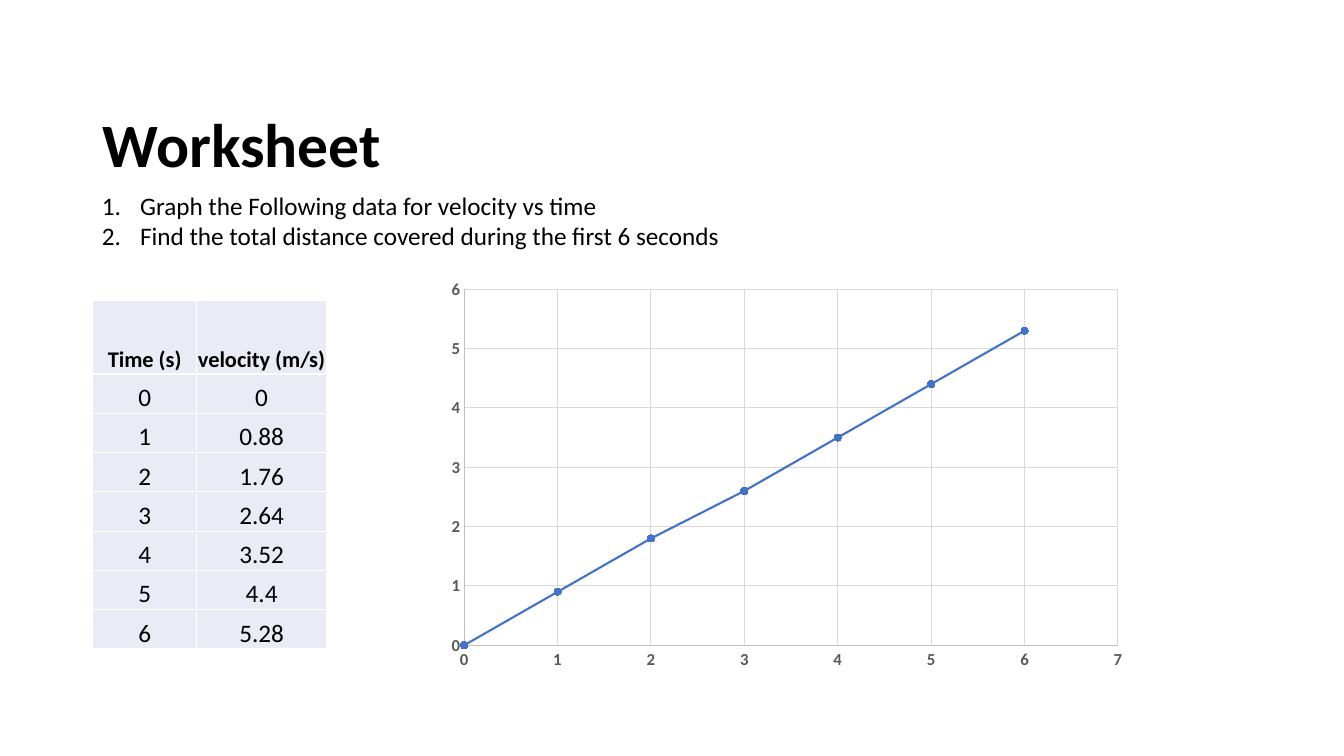
from lxml.etree import SubElement
from pptx import Presentation
from pptx.chart.data import XyChartData
from pptx.dml.color import RGBColor
from pptx.enum.chart import XL_CHART_TYPE, XL_MARKER_STYLE, XL_TICK_MARK
from pptx.enum.text import MSO_ANCHOR, MSO_AUTO_SIZE, PP_ALIGN
from pptx.oxml.ns import qn
from pptx.util import Inches, Pt

FONT = "Calibri"
COLORS = {
    "text": "000000",
    "cell": "E9EBF5",
    "border": "FFFFFF",
    "series": "4472C4",
    "label": "595959",
    "axis": "BFBFBF",
    "grid": "D9D9D9",
}
TASKS = [
    "Graph the Following data for velocity vs time",
    "Find the total distance covered during the first 6 seconds",
]
HEADINGS = ["Time (s)", "velocity (m/s)"]
READINGS = [(0, 0), (1, 0.88), (2, 1.76), (3, 2.64), (4, 3.52), (5, 4.4), (6, 5.28)]


def color(name):
    return RGBColor.from_string(COLORS[name])


def style_font(font, size, name="text", bold=False):
    font.name = FONT
    font.size = Pt(size)
    font.bold = bold
    font.color.rgb = color(name)


def style_line(line, name, width):
    line.color.rgb = color(name)
    line.width = Pt(width)


def place(shape, box):
    shape.left, shape.top, shape.width, shape.height = (Inches(v) for v in box)


def add_title(page, box):
    title = page.shapes.title
    place(title, box)
    frame = title.text_frame
    frame.text = "Worksheet"
    frame.auto_size = MSO_AUTO_SIZE.NONE
    frame.vertical_anchor = MSO_ANCHOR.BOTTOM
    para = frame.paragraphs[0]
    para.alignment = PP_ALIGN.LEFT
    para.line_spacing = 0.9
    style_font(para.font, 44, bold=True)


def add_tasks(page, box):
    body = page.placeholders[1]
    place(body, box)
    frame = body.text_frame
    frame.text = "\n".join(TASKS)
    frame.auto_size = MSO_AUTO_SIZE.SHAPE_TO_FIT_TEXT
    frame.vertical_anchor = MSO_ANCHOR.TOP
    for para in frame.paragraphs:
        properties = para._p.get_or_add_pPr()
        properties.set("marL", str(Inches(0.38)))
        properties.set("indent", str(-Inches(0.38)))
        SubElement(properties, qn("a:buFont"), typeface="+mj-lt")
        SubElement(properties, qn("a:buAutoNum"), type="arabicPeriod")
        para.space_before = Pt(0)
        style_font(para.font, 18)


def add_borders(cell):
    properties = cell._tc.get_or_add_tcPr()
    for position, side in enumerate(("lnL", "lnR", "lnT", "lnB")):
        line = properties.makeelement(qn(f"a:{side}"), {"w": str(Pt(1))})
        fill = SubElement(line, qn("a:solidFill"))
        SubElement(fill, qn("a:srgbClr"), val=COLORS["border"])
        properties.insert(position, line)


def fill_cell(cell, text, size, bold):
    cell.fill.solid()
    cell.fill.fore_color.rgb = color("cell")
    cell.margin_left = cell.margin_right = cell.margin_top = Inches(0.01)
    cell.margin_bottom = 0
    cell.vertical_anchor = MSO_ANCHOR.BOTTOM
    cell.text = text
    para = cell.text_frame.paragraphs[0]
    para.alignment = PP_ALIGN.CENTER
    style_font(para.font, size, bold=bold)
    add_borders(cell)


def add_readings_table(page, box):
    rows = [HEADINGS, *READINGS]
    table = page.shapes.add_table(len(rows), 2, *(Inches(v) for v in box)).table
    for column, width in zip(table.columns, (1.03, 1.29)):
        column.width = Inches(width)
    for index, values in enumerate(rows):
        heading = index == 0
        table.rows[index].height = Inches(0.73 if heading else 0.39)
        for column, value in enumerate(values):
            fill_cell(table.cell(index, column), str(value), 16 if heading else 18, heading)


def style_axis(axis, maximum):
    axis.minimum_scale = 0
    axis.maximum_scale = maximum
    axis.major_unit = 1
    axis.major_tick_mark = axis.minor_tick_mark = XL_TICK_MARK.NONE
    axis.has_major_gridlines = True
    style_line(axis.major_gridlines.format.line, "grid", 0.75)
    style_line(axis.format.line, "axis", 0.75)
    style_font(axis.tick_labels.font, 12, "label", bold=True)
    axis.tick_labels.number_format = "General"
    axis.tick_labels.number_format_is_linked = False


def add_velocity_chart(page, box):
    data = XyChartData()
    points = data.add_series("Series 1")
    for time, velocity in READINGS:
        points.add_data_point(time, round(velocity, 1))
    chart = page.shapes.add_chart(
        XL_CHART_TYPE.XY_SCATTER_LINES, *(Inches(v) for v in box), data
    ).chart
    chart.has_legend = False
    chart.has_title = False
    style_font(chart.font, 10)
    style_axis(chart.category_axis, 7)
    style_axis(chart.value_axis, 6)

    # Line and markers
    plot = chart.plots[0]
    plot.vary_by_categories = False
    series = plot.series[0]
    series.smooth = False
    style_line(series.format.line, "series", 1.5)
    marker = series.marker
    marker.style = XL_MARKER_STYLE.CIRCLE
    marker.size = 5
    marker.format.fill.solid()
    marker.format.fill.fore_color.rgb = color("series")
    style_line(marker.format.line, "series", 0.75)


def main():
    deck = Presentation()
    deck.slide_width, deck.slide_height = Inches(13.33), Inches(7.5)
    page = deck.slides.add_slide(deck.slide_layouts[1])
    add_title(page, (0.92, 0.39, 11.5, 1.45))
    add_readings_table(page, (0.92, 2.98, 2.32, 3.46))
    add_tasks(page, (0.91, 1.84, 9.47, 0.71))
    add_velocity_chart(page, (4.34, 2.69, 6.93, 4.03))
    deck.save("out.pptx")


if __name__ == "__main__":
    main()
